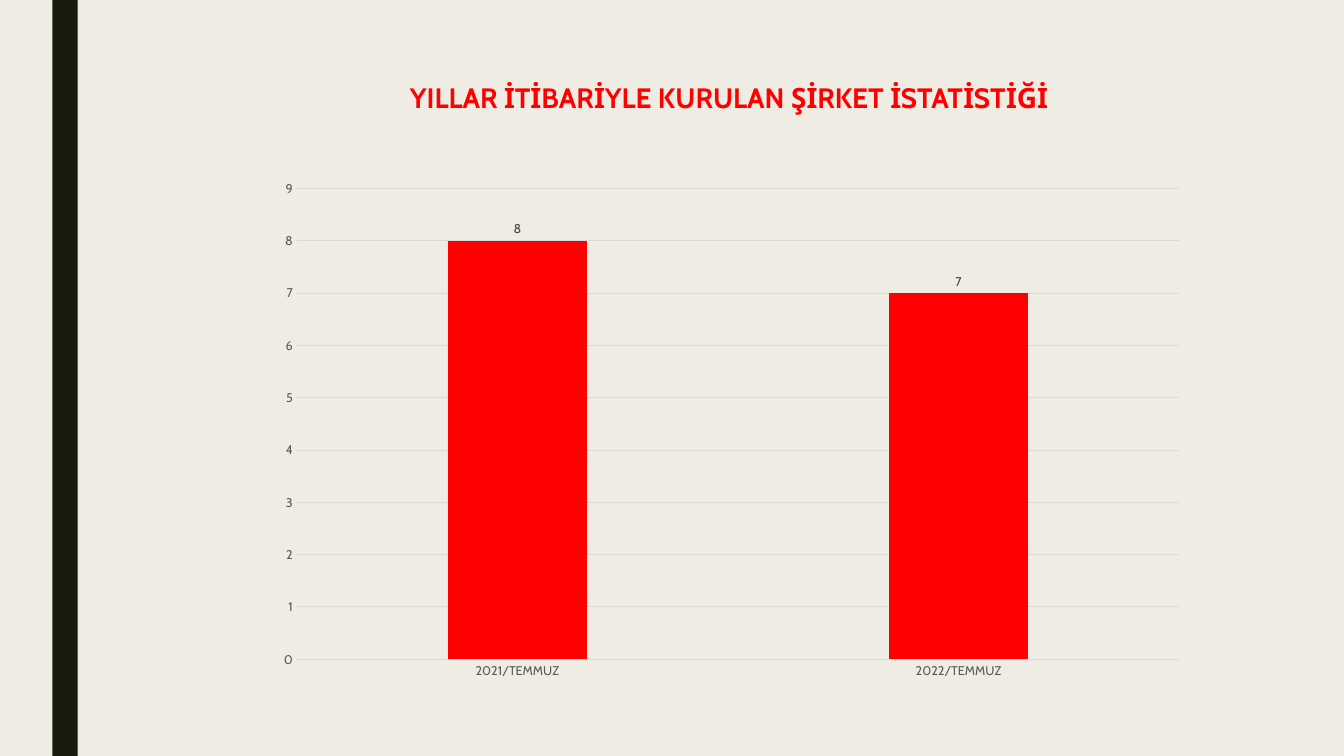
from pptx import Presentation
from pptx.chart.data import CategoryChartData as Data
from pptx.dml.color import RGBColor as RGB
from pptx.enum.chart import XL_CHART_TYPE as Kind, XL_LABEL_POSITION as Spot, XL_TICK_MARK as Tick
from pptx.enum.shapes import MSO_SHAPE as Form
from pptx.enum.text import MSO_ANCHOR as Anchor, PP_ALIGN as Align
from pptx.util import Inches, Pt

WIDE, HIGH = 13.33, 7.5


def tint(code):
    return RGB.from_string(code)


def style(font, size, color, face="Cabin", bold=False):
    font.name, font.size, font.bold = face, Pt(size), bold
    font.color.rgb = tint(color)


def write(frame, text, size=20, color="FF0000", bold=False, align=Align.CENTER, gap=0.89):
    frame.word_wrap = True
    frame.vertical_anchor = Anchor.MIDDLE
    par = frame.paragraphs[0]
    par.alignment, par.line_spacing = align, gap
    run = par.add_run()
    run.text = text
    style(run.font, size, color, bold=bold)


class Page:
    paper, dark, red = "EFEDE3", "191B0E", "FF0000"
    grid, grey, ink = "D9D9D9", "595959", "404040"

    def __init__(self, deck):
        self.deck = deck
        self.slide = deck.slides.add_slide(deck.slide_layouts[5])
        fill = self.slide.background.fill
        fill.solid()
        fill.fore_color.rgb = tint(self.paper)

    def area(self, x, y, w, h):
        """Turn shares of the slide's size into lengths."""
        wide, high = self.deck.slide_width, self.deck.slide_height
        return [round(n) for n in (x * wide, y * high, w * wide, h * high)]

    def band(self, *box):
        bar = self.slide.shapes.add_shape(Form.RECTANGLE, *self.area(*box))
        bar.shadow.inherit = False
        bar.fill.solid()
        bar.fill.fore_color.rgb = tint(self.dark)
        bar.line.fill.background()

    def title(self, text, *box):
        head = self.slide.shapes.title
        head.left, head.top, head.width, head.height = self.area(*box)
        write(head.text_frame, text, color=self.red, bold=True)

    def rule(self, line):
        line.color.rgb = tint(self.grid)
        line.width = Pt(0.75)

    def bars(self, cats, vals, *box):
        data = Data()
        data.categories = cats
        data.add_series("Series 1", vals)
        chart = self.slide.shapes.add_chart(Kind.COLUMN_CLUSTERED, *self.area(*box), data).chart
        chart.has_legend = chart.has_title = False
        style(chart.font, 10, "000000")

        for axis in (chart.category_axis, chart.value_axis):
            axis.major_tick_mark = axis.minor_tick_mark = Tick.NONE
            style(axis.tick_labels.font, 9, self.grey)
        self.rule(chart.category_axis.format.line)
        scale = chart.value_axis
        scale.minimum_scale, scale.maximum_scale, scale.major_unit = 0, 9, 1
        scale.format.line.fill.background()
        self.rule(scale.major_gridlines.format.line)

        plot = chart.plots[0]
        plot.gap_width, plot.overlap = 219, -27
        plot.vary_by_categories = False
        fill = plot.series[0].format.fill
        fill.solid()
        fill.fore_color.rgb = tint(self.red)
        tags = plot.series[0].data_labels
        tags.show_value, tags.position = True, Spot.OUTSIDE_END
        style(tags.font, 9, self.ink)


def main():
    deck = Presentation()
    deck.slide_width, deck.slide_height = Inches(WIDE), Inches(HIGH)
    page = Page(deck)
    page.band(0.52 / WIDE, 0, 0.25 / WIDE, 1)
    page.title("YILLAR İTİBARİYLE KURULAN ŞİRKET İSTATİSTİĞİ",
               3.56 / WIDE, 0.1, 7.34 / WIDE, 0.47 / HIGH)
    page.bars(["2021/TEMMUZ", "2022/TEMMUZ"], [8, 7],
              2.63 / WIDE, 1.69 / HIGH, 9.25 / WIDE, 5.15 / HIGH)
    deck.save("out.pptx")


if __name__ == "__main__":
    main()
